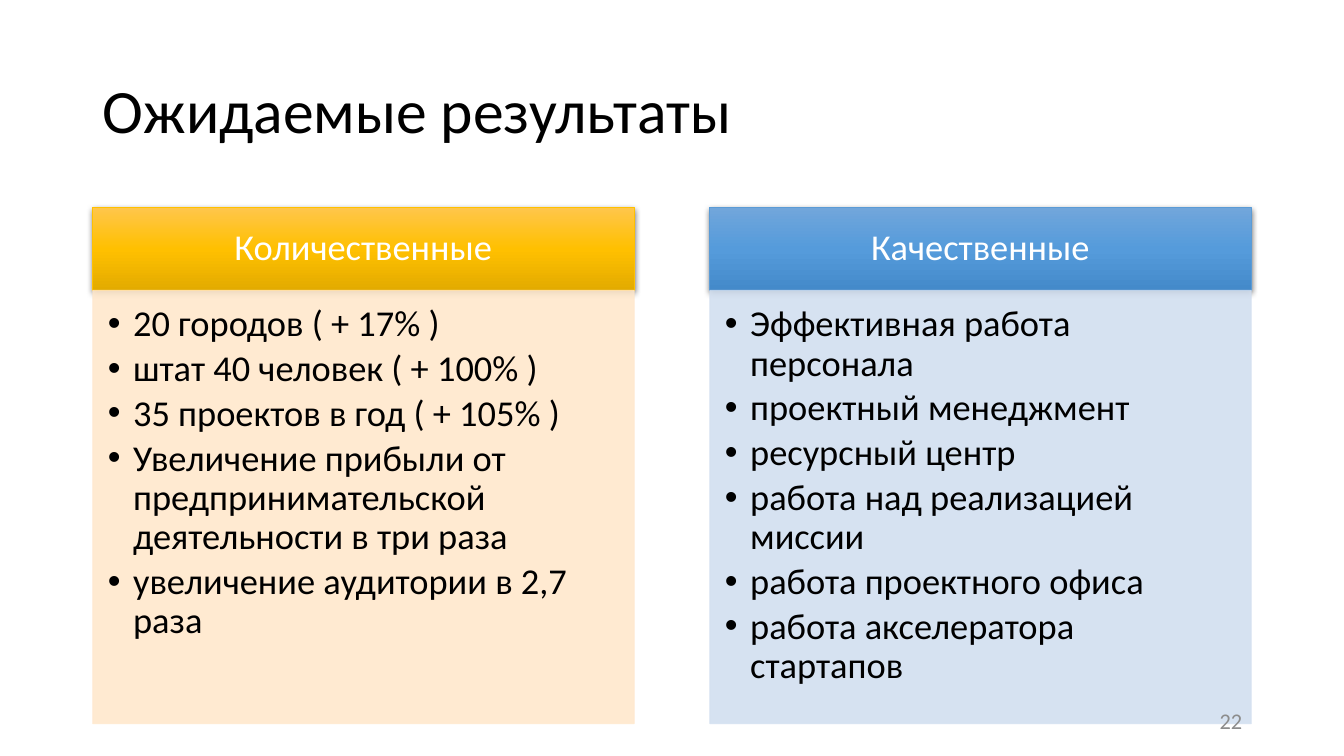
import copy

import lxml.etree
import pptx
import pptx.dml.color
import pptx.enum.text
import pptx.oxml.ns
import pptx.util

Inches = pptx.util.Inches
Pt = pptx.util.Pt
ALIGN = pptx.enum.text.PP_ALIGN
ANCHOR = pptx.enum.text.MSO_ANCHOR

WIDTH = 5.37
TOP = 2.06
HEAD = 0.82
BODY = 4.3

PANELS = [
    (0.92, "Количественные", ("FFC64B", "FFC000", "E3AB00"), "FFC000", "FFE8CC",
     ["20 городов ( + 17% )",
      "штат 40 человек ( + 100% )",
      "35 проектов в год ( + 105% )",
      "Увеличение прибыли от предпринимательской деятельности в три раза",
      "увеличение аудитории в 2,7 раза"]),
    (7.04, "Качественные", ("71A6DB", "559BDB", "448ACA"), "5B9BD5", "D2DFF0",
     ["Эффективная работа персонала",
      "проектный менеджмент",
      "ресурсный центр",
      "работа над реализацией миссии",
      "работа проектного офиса",
      "работа акселератора стартапов"]),
]


def color(code):
    return pptx.dml.color.RGBColor.from_string(code)


def add(parent, tag, **attrs):
    return lxml.etree.SubElement(parent, pptx.oxml.ns.qn(tag), **attrs)


def place(shape, left, top, width, height):
    shape.left, shape.top = Inches(left), Inches(top)
    shape.width, shape.height = Inches(width), Inches(height)


def write(shape, lines, size=26, ink="000000", align=ALIGN.LEFT,
          anchor=ANCHOR.MIDDLE, inset=(0.1, 0.05, 0.1, 0.05),
          space=0.9, after=0, bullet=False):
    frame = shape.text_frame
    frame.text = "\n".join(lines)
    frame.word_wrap = True
    frame.auto_size = pptx.enum.text.MSO_AUTO_SIZE.NONE
    frame.vertical_anchor = anchor
    (frame.margin_left, frame.margin_top,
     frame.margin_right, frame.margin_bottom) = map(Inches, inset)
    for para in frame.paragraphs:
        para.alignment = align
        para.line_spacing = space
        para.space_before = Pt(0)
        para.space_after = Pt(after)
        font = para.runs[0].font
        font.name, font.size, font.bold = "Calibri", Pt(size), False
        font.color.rgb = color(ink)
        if bullet:
            props = para._p.get_or_add_pPr()
            props.set("marL", str(Inches(0.25)))
            props.set("indent", str(-Inches(0.25)))
            add(props, "a:buChar", char="•")


def border(shape, code):
    shape.line.color.rgb = color(code)
    shape.line.width = Pt(0.5)


def blend(shape, codes):
    shape.fill.gradient()
    shape.fill.gradient_angle = 270
    stops = shape._element.spPr.find(".//" + pptx.oxml.ns.qn("a:gsLst"))
    stops.insert(1, copy.deepcopy(stops[0]))
    for index, (stop, code) in enumerate(zip(shape.fill.gradient_stops, codes)):
        stop.position = index / 2
        stop.color.rgb = color(code)


def shade(shape):
    effects = add(shape._element.spPr, "a:effectLst")
    shadow = add(effects, "a:outerShdw", blurRad=str(Pt(4.5)), dist=str(Pt(1.5)),
                 dir="5400000", algn="ctr", rotWithShape="0")
    tone = add(shadow, "a:srgbClr", val="000000")
    add(tone, "a:alpha", val="63000")


def tint(shape, code):
    shape.fill.solid()
    shape.fill.fore_color.rgb = color(code)
    border(shape, code)
    for tone in shape._element.spPr.iter(pptx.oxml.ns.qn("a:srgbClr")):
        add(tone, "a:alpha", val="90000")


def panel(head, body, left, title, codes, edge, pale, items):
    place(head, left, TOP, WIDTH, HEAD)
    blend(head, codes)
    border(head, edge)
    shade(head)
    write(head, [title], ink="FFFFFF", align=ALIGN.CENTER,
          inset=(0.2, 0.12, 0.2, 0.12))
    place(body, left, TOP + HEAD, WIDTH, BODY)
    tint(body, pale)
    write(body, items, anchor=ANCHOR.TOP, inset=(0.15, 0.15, 0.2, 0.23),
          after=3.9, bullet=True)


def main():
    deck = pptx.Presentation()
    deck.slide_width, deck.slide_height = Inches(13.33), Inches(7.5)
    slide = deck.slides.add_slide(deck.slide_layouts.get_by_name("Comparison"))
    title, *holders = slide.placeholders
    place(title, 0.92, 0.4, 11.5, 1.45)
    write(title, ["Ожидаемые результаты"], size=44)
    for head, body, data in zip(holders[::2], holders[1::2], PANELS):
        panel(head, body, *data)
    number = slide.shapes.add_textbox(0, 0, 0, 0)
    place(number, 9.42, 6.95, 3, 0.4)
    write(number, ["22"], size=16, ink="8C8C8C", align=ALIGN.RIGHT, space=1.0)
    deck.save("out.pptx")


if __name__ == "__main__":
    main()
